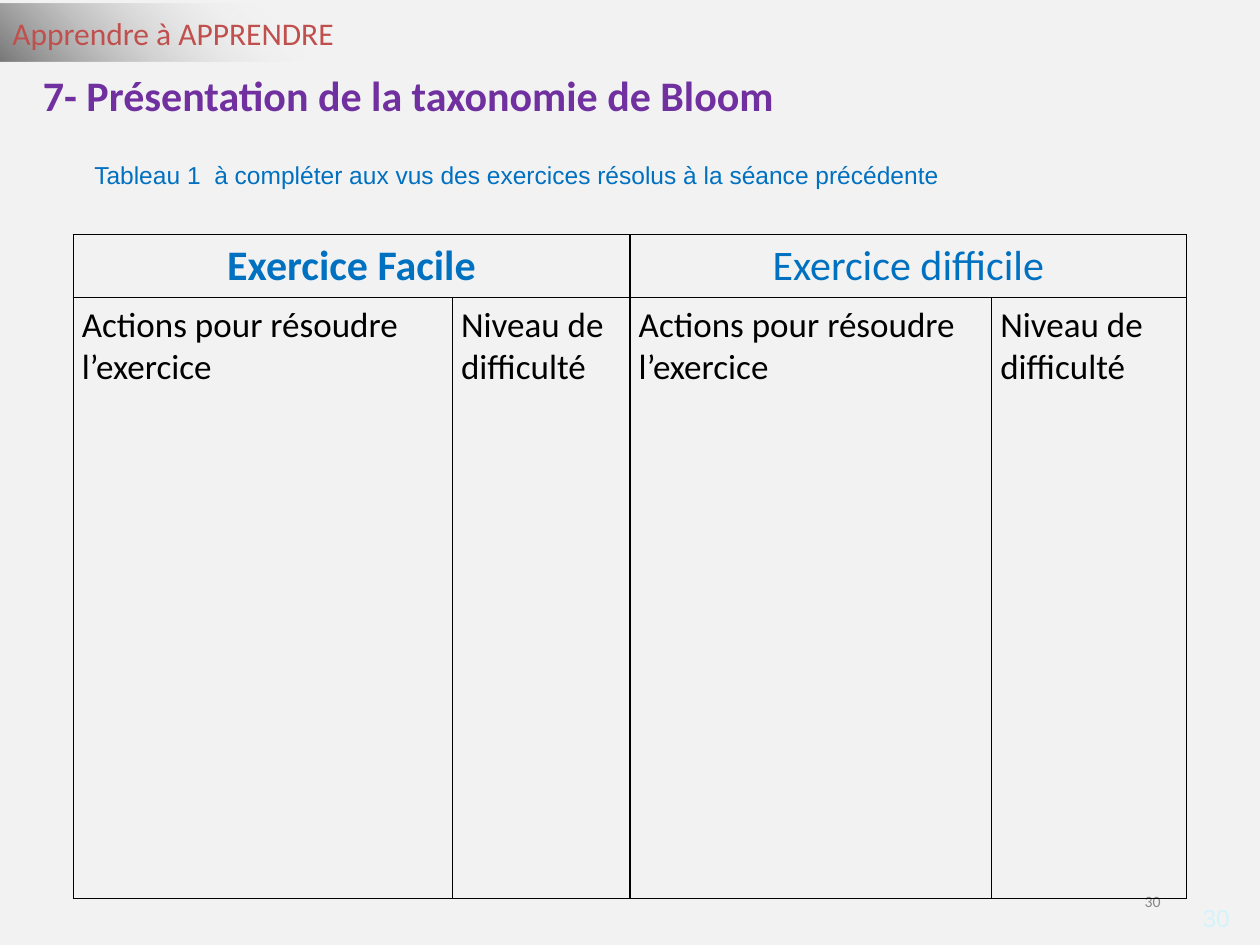
from dataclasses import dataclass

from pptx import Presentation
from pptx.dml.color import RGBColor
from pptx.enum.text import MSO_ANCHOR, MSO_AUTO_SIZE, PP_ALIGN
from pptx.enum.shapes import MSO_SHAPE
from pptx.oxml import parse_xml
from pptx.oxml.ns import nsdecls
from pptx.util import Inches, Pt

LEFT, CENTER, RIGHT = PP_ALIGN.LEFT, PP_ALIGN.CENTER, PP_ALIGN.RIGHT
TOP, MIDDLE = MSO_ANCHOR.TOP, MSO_ANCHOR.MIDDLE
RECT = MSO_SHAPE.RECTANGLE
FIXED = MSO_AUTO_SIZE.NONE


@dataclass(frozen=True)
class Theme:
    ground: str = "F2F2F2"
    black: str = "000000"
    red: str = "C0504D"
    purple: str = "7030A0"
    blue: str = "0070C0"
    grey: str = "888888"
    pale: str = "D5F3FA"
    dark: str = "010101"
    light: str = "FEFEFE"
    head: str = "Calibri"
    body: str = "Arial"
    large: int = 24
    cell: int = 20
    band: int = 18
    note: int = 14
    small: int = 9
    rule: float = 0.75


THEME = Theme()


def write(frame, text, size=THEME.cell, color=THEME.black, font=THEME.head,
          bold=False, align=LEFT, anchor=TOP):
    frame.word_wrap = True
    frame.vertical_anchor = anchor
    para = frame.paragraphs[0]
    para.alignment = align
    run = para.add_run()
    run.text = text
    run.font.name = font
    run.font.size = Pt(size)
    run.font.bold = bold
    run.font.color.rgb = RGBColor.from_string(color)


def add_text(slide, box, text, **style):
    shape = slide.shapes.add_textbox(*map(Inches, box))
    write(shape.text_frame, text, **style)


def add_band(slide, box, text):
    shape = slide.shapes.add_shape(RECT, *map(Inches, box))
    shape.shadow.inherit = False
    shape.line.fill.background()
    stops = [(0, THEME.dark, 51), (60, THEME.light, 0), (100, THEME.light, 0)]
    marks = "".join(
        f'<a:gs pos="{pos * 1000}"><a:srgbClr val="{color}">'
        f'<a:alpha val="{alpha * 1000}"/></a:srgbClr></a:gs>'
        for pos, color, alpha in stops)
    shape.fill.background()
    props = shape._element.spPr
    blank = props.find("{*}noFill")
    props.replace(blank, parse_xml(
        f'<a:gradFill {nsdecls("a")}><a:gsLst>{marks}</a:gsLst>'
        '<a:path path="circle"><a:fillToRect t="100000" r="100000"/>'
        '</a:path></a:gradFill>'))
    write(shape.text_frame, text, size=THEME.band, color=THEME.red,
          anchor=MIDDLE)


def add_title(slide, box, text):
    title = slide.shapes.title
    title.left, title.top, title.width, title.height = map(Inches, box)
    title.text_frame.auto_size = FIXED
    write(title.text_frame, text, size=THEME.large, color=THEME.purple,
          bold=True)


def frame_cell(cell):
    cell.margin_left = cell.margin_right = Inches(0.07)
    cell.fill.background()
    props = cell._tc.get_or_add_tcPr()
    for spot, side in enumerate("LRTB"):
        props.insert(spot, parse_xml(
            f'<a:ln{side} {nsdecls("a")} w="{Pt(THEME.rule)}"><a:solidFill>'
            f'<a:srgbClr val="{THEME.black}"/></a:solidFill></a:ln{side}>'))


def add_grid(slide, box, parts, head, groups, labels):
    left, top, width, height = box
    count = len(parts)
    table = slide.shapes.add_table(2, count, *map(Inches, box)).table
    table.first_row = table.horz_banding = False
    for col, part in zip(table.columns, parts):
        col.width = Inches(width * part / sum(parts))
    table.rows[0].height = Inches(head)
    table.rows[1].height = Inches(height - head)
    for cell in table.iter_cells():
        frame_cell(cell)
    span = len(labels)
    for index, (text, bold) in enumerate(groups):
        start = index * span
        cell = table.cell(0, start)
        cell.merge(table.cell(0, start + span - 1))
        write(cell.text_frame, text, size=THEME.large, color=THEME.blue,
              bold=bold, align=CENTER)
    for col in range(count):
        write(table.cell(1, col).text_frame, labels[col % span])


def main():
    deck = Presentation()
    deck.slide_width, deck.slide_height = Inches(10), Inches(7.5)
    slide = deck.slides.add_slide(deck.slide_layouts[5])
    ground = slide.background.fill
    ground.solid()
    ground.fore_color.rgb = RGBColor.from_string(THEME.ground)

    add_band(slide, (0, 0.03, 3.9, 0.46), "Apprendre à APPRENDRE")
    add_text(slide, (9.2, 7.11, 0.66, 0.34), "30", size=THEME.note,
             color=THEME.pale, font=THEME.body, align=RIGHT, anchor=MIDDLE)
    add_text(slide, (7.06, 6.95, 2.25, 0.4), "30", size=THEME.small,
             color=THEME.grey, align=RIGHT, anchor=MIDDLE)
    add_grid(slide, (0.58, 1.86, 8.84, 5.27), (3.01, 1.41, 2.87, 1.55), 0.5,
             [("Exercice Facile", True), ("Exercice difficile", False)],
             ["Actions pour résoudre l’exercice", "Niveau de difficulté"])
    add_title(slide, (0.24, 0.5, 6.17, 0.5),
              "7- Présentation de la taxonomie de Bloom")
    add_text(slide, (0.65, 1.22, 7.23, 0.34),
             "Tableau 1  à compléter aux vus des exercices résolus "
             "à la séance précédente",
             size=THEME.note, color=THEME.blue, font=THEME.body)
    deck.save("out.pptx")


if __name__ == "__main__":
    main()
